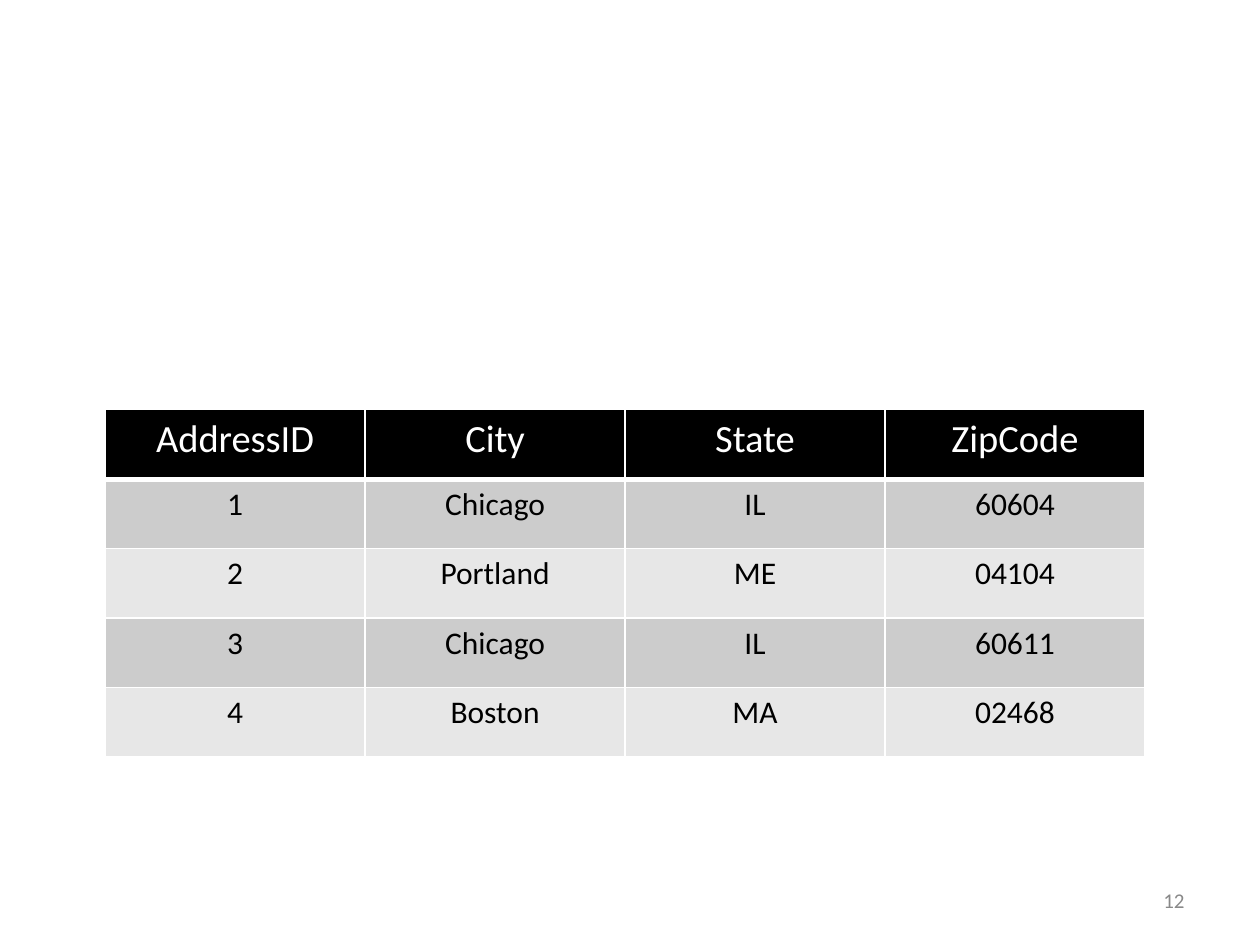
from dataclasses import dataclass

from lxml import etree
from pptx import Presentation
from pptx.dml.color import RGBColor
from pptx.enum.text import MSO_ANCHOR, PP_ALIGN
from pptx.oxml.ns import qn
from pptx.util import Cm, Pt

CENTER, RIGHT = PP_ALIGN.CENTER, PP_ALIGN.RIGHT
MIDDLE = MSO_ANCHOR.MIDDLE
FONT = "Calibri"
COLORS = {
    "black": "000000",
    "white": "FFFFFF",
    "dark": "CCCCCC",
    "light": "E7E7E7",
    "gray": "898989",
}


@dataclass
class Style:
    size: int
    color: str
    align: PP_ALIGN = CENTER


@dataclass
class Row:
    texts: tuple[str, ...]
    fill: str
    style: Style
    base: int = 1  # bottom border in points


HEAD = Style(22, "white")
BODY = Style(18, "black")
PAGE = Style(12, "gray", RIGHT)

ROWS = [
    Row(("AddressID", "City", "State", "ZipCode"), "black", HEAD, 3),
    Row(("1", "Chicago", "IL", "60604"), "dark", BODY),
    Row(("2", "Portland", "ME", "04104"), "light", BODY),
    Row(("3", "Chicago", "IL", "60611"), "dark", BODY),
    Row(("4", "Boston", "MA", "02468"), "light", BODY),
]
COL_W, ROW_H = 5.24, 1.4


def write(frame, text: str, style: Style) -> None:
    frame.text = text
    para = frame.paragraphs[0]
    para.alignment = style.align
    font = para.runs[0].font
    font.name, font.size, font.bold = FONT, Pt(style.size), False
    font.color.rgb = RGBColor.from_string(COLORS[style.color])


def border(cell, side: str, width: int) -> None:
    props = cell._tc.get_or_add_tcPr()
    line = etree.SubElement(props, qn(f"a:ln{side}"), w=str(Pt(width)))
    fill = etree.SubElement(line, qn("a:solidFill"))
    etree.SubElement(fill, qn("a:srgbClr"), val=COLORS["white"])


def draw_cell(cell, text: str, row: Row) -> None:
    write(cell.text_frame, text, row.style)
    for side in "LRTB":
        border(cell, side, row.base if side == "B" else 1)
    cell.fill.solid()
    cell.fill.fore_color.rgb = RGBColor.from_string(COLORS[row.fill])


def draw_table(slide, rows: list[Row]) -> None:
    count = len(rows[0].texts)
    table = slide.shapes.add_table(
        len(rows), count, Cm(2.12), Cm(8.26),
        Cm(COL_W * count), Cm(ROW_H * len(rows)),
    ).table
    for r, row in enumerate(rows):
        for c, text in enumerate(row.texts):
            draw_cell(table.cell(r, c), text, row)


def draw_page(slide, text: str) -> None:
    box = slide.shapes.add_textbox(Cm(18.2), Cm(17.65), Cm(5.93), Cm(1.01))
    frame = box.text_frame
    frame.word_wrap = True
    frame.vertical_anchor = MIDDLE
    write(frame, text, PAGE)


def main() -> None:
    deck = Presentation()
    deck.slide_width, deck.slide_height = Cm(25.4), Cm(19.05)
    # The slide has no title, so it takes the blank layout
    slide = deck.slides.add_slide(deck.slide_layouts[6])

    # Address table
    draw_table(slide, ROWS)

    # Slide number
    draw_page(slide, "12")

    deck.save("out.pptx")


if __name__ == "__main__":
    main()
